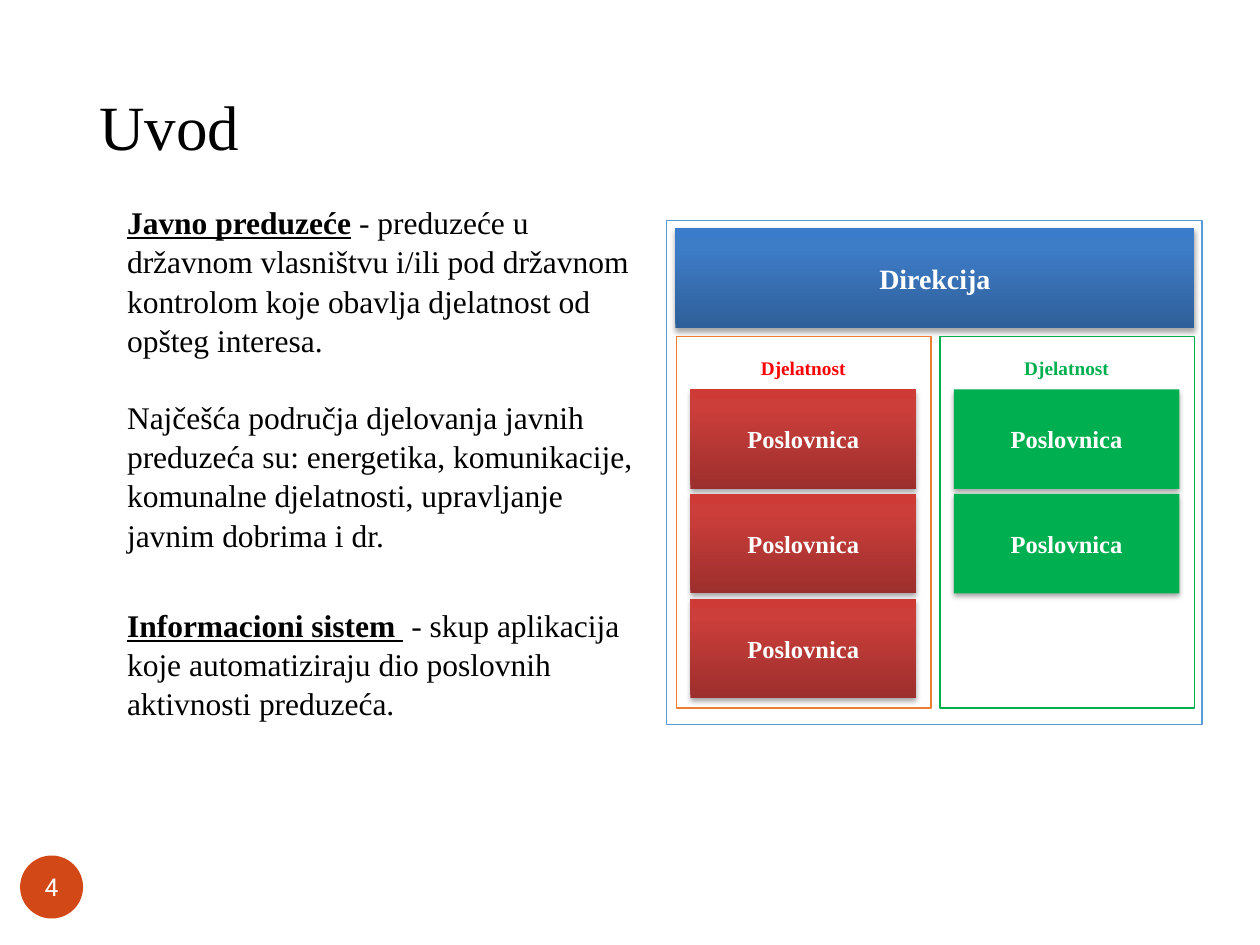
from copy import deepcopy

from lxml import etree
from pptx import Presentation
from pptx import util as u
from pptx.dml.color import RGBColor
from pptx.enum import shapes, text
from pptx.oxml import ns

SERIF = "Times New Roman"
BLUE = ((0, "2F5F99"), (0.8, "3D7CC7"), (1, "3A7CCB"))
RED = ((0, "9C2F2D"), (0.8, "CB3E3A"), (1, "CE3B37"))
GREEN = "00B050"


def rgb(value):
    return RGBColor.from_string(value)


class SlideBuilder:
    """Holds the style and the current slide."""

    def __init__(self, slide):
        self.s = slide

    def font(self, r, size, color, name=SERIF, bold=False, underline=False):
        f = r.font
        f.name, f.size, f.bold, f.underline = name, u.Pt(size), bold, underline
        f.color.rgb = rgb(color)

    def textbox(self, box, anchor=text.MSO_ANCHOR.TOP):
        tf = self.s.shapes.add_textbox(*map(u.Inches, box)).text_frame
        tf.word_wrap = True
        tf.vertical_anchor = anchor
        return tf

    def title(self, words, box):
        p = self.textbox(box, text.MSO_ANCHOR.MIDDLE).paragraphs[0]
        p.text = words
        p.line_spacing = 0.9
        self.font(p.runs[0], 36, "000000")

    def body(self, paragraphs, box):
        tf = self.textbox(box)
        for i, (before, term, words) in enumerate(paragraphs):
            p = tf.add_paragraph() if i else tf.paragraphs[0]
            p.line_spacing = 1.04
            if before:
                p.space_before = u.Pt(before)
            if term:
                r = p.add_run()
                r.text = term
                self.font(r, 18, "000000", bold=True, underline=True)
            r = p.add_run()
            r.text = words
            self.font(r, 18, "000000")

    def shape(self, box, fill, line=None, kind=shapes.MSO_SHAPE.RECTANGLE):
        sp = self.s.shapes.add_shape(kind, *map(u.Inches, box))
        sp.shadow.inherit = False
        if isinstance(fill, str):
            sp.fill.solid()
            sp.fill.fore_color.rgb = rgb(fill)
        else:
            self.gradient(sp, fill)
        if line:
            sp.line.color.rgb = rgb(line)
            sp.line.width = u.Pt(1)
        else:
            sp.line.fill.background()
        return sp

    def gradient(self, sp, colors):
        sp.fill.gradient()
        sp.fill.gradient_angle = 90
        stops = sp._element.spPr.find(".//" + ns.qn("a:gsLst"))
        stops.append(deepcopy(stops[-1]))
        for stop, (position, color) in zip(sp.fill.gradient_stops, colors):
            stop.position = position
            stop.color.rgb = rgb(color)

    def cast_shadow(self, sp):
        effects = sp._element.spPr.find(ns.qn("a:effectLst"))
        shadow = etree.SubElement(
            effects, ns.qn("a:outerShdw"), blurRad=str(u.Pt(3.1)),
            dist=str(u.Pt(1.8)), dir="5400000", rotWithShape="0")
        color = etree.SubElement(shadow, ns.qn("a:srgbClr"), val="000000")
        etree.SubElement(color, ns.qn("a:alpha"), val="35000")

    def caption(self, sp, words, size, color="FFFFFF", name=SERIF, bold=True):
        tf = sp.text_frame
        tf.text = words
        tf.vertical_anchor = text.MSO_ANCHOR.MIDDLE
        p = tf.paragraphs[0]
        p.alignment = text.PP_ALIGN.CENTER
        self.font(p.runs[0], size, color, name, bold)
        return tf

    def block(self, words, box, fill, size):
        sp = self.shape(box, fill)
        self.cast_shadow(sp)
        self.caption(sp, words, size)

    def activity(self, left, line, label_color, fill, offices):
        self.shape((left, 2.67, 2.02, 2.95), "FFFFFF", line)
        inner = left + 0.11
        label = self.shape((inner, 2.75, 1.79, 0.26), "FFFFFF")
        tf = self.caption(label, "Djelatnost", 11, label_color)
        tf.vertical_anchor = text.MSO_ANCHOR.TOP
        tf.paragraphs[0].line_spacing = 1.15
        tf.paragraphs[0].space_after = u.Pt(10)
        for i in range(offices):
            self.block("Poslovnica", (inner, 3.09 + 0.83 * i, 1.79, 0.79), fill, 14)

    def page_number(self, number, box):
        sp = self.shape(box, "D34817", kind=shapes.MSO_SHAPE.OVAL)
        tf = self.caption(sp, number, 14, name="Roboto", bold=False)
        tf.margin_left = tf.margin_right = tf.margin_top = tf.margin_bottom = 0
        tf.word_wrap = False


def main():
    prs = Presentation()
    prs.slide_width, prs.slide_height = u.Inches(10), u.Inches(7.5)
    b = SlideBuilder(prs.slides.add_slide(prs.slide_layouts[6]))

    # Title and definitions
    b.title("Uvod", (0.69, 0.67, 8.62, 0.72))
    b.body([
        (0, "Javno preduzeće", " - preduzeće u državnom vlasništvu i/ili pod "
         "državnom kontrolom koje obavlja djelatnost od opšteg interesa."),
        (21.5, "", "Najčešća područja djelovanja javnih preduzeća su: energetika, "
         "komunikacije, komunalne djelatnosti, upravljanje javnim dobrima i dr."),
        (29, "Informacioni sistem ", " - skup aplikacija koje automatiziraju dio "
         "poslovnih aktivnosti preduzeća."),
    ], (0.91, 1.55, 4.31, 4.75))
    b.page_number("4", (0.16, 6.79, 0.5, 0.5))

    # Company structure
    b.shape((5.29, 1.75, 4.25, 4), "FFFFFF", "5B9BD5")
    b.block("Direkcija", (5.36, 1.81, 4.12, 0.79), BLUE, 16)
    b.activity(7.46, GREEN, GREEN, GREEN, 2)
    b.activity(5.37, "ED7D31", "FF0000", RED, 3)

    prs.save("out.pptx")


if __name__ == "__main__":
    main()
